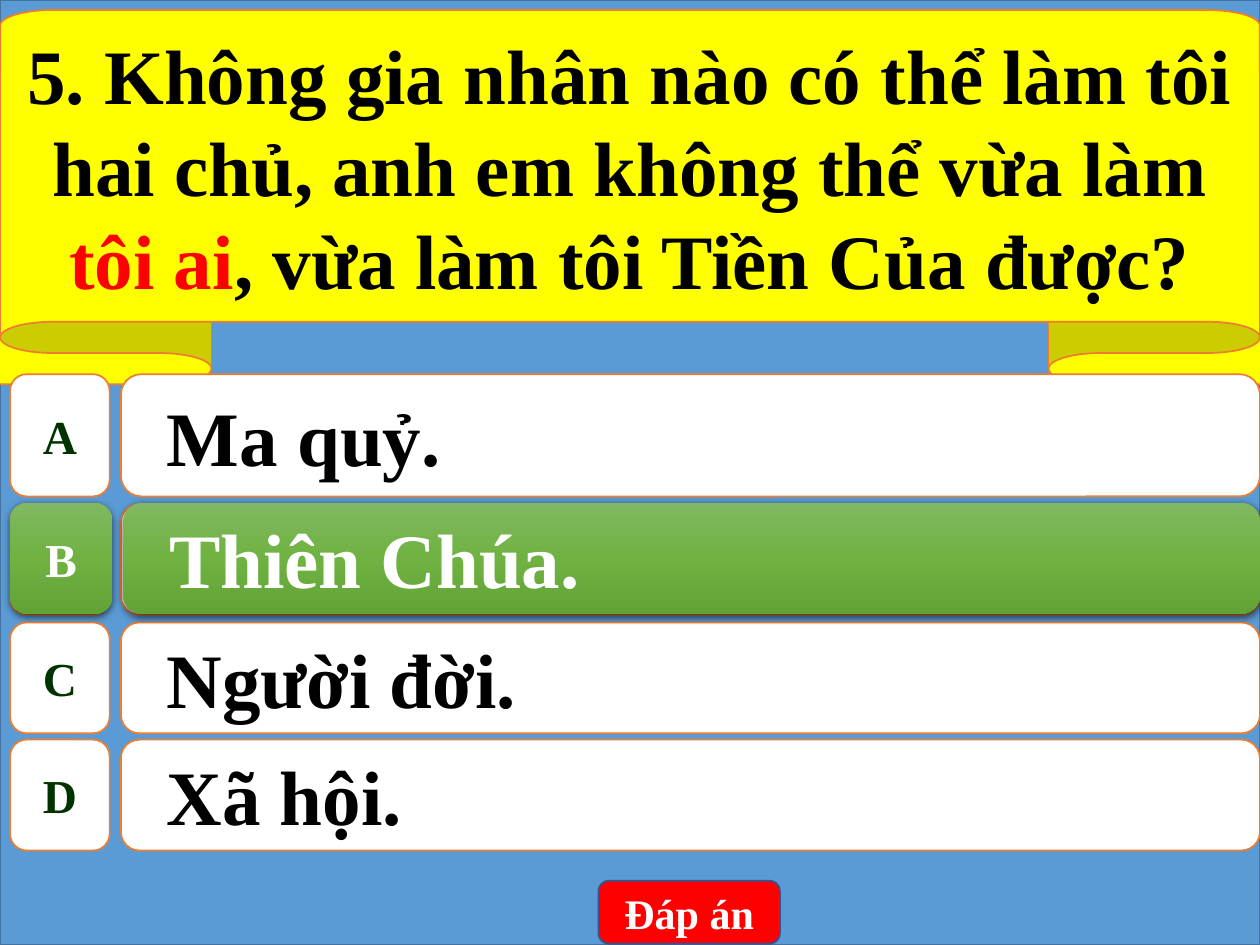
from dataclasses import dataclass

from lxml.etree import SubElement
from pptx import Presentation
from pptx.dml.color import RGBColor
from pptx.enum.shapes import MSO_SHAPE
from pptx.enum.text import MSO_ANCHOR, PP_ALIGN
from pptx.oxml.ns import qn
from pptx.util import Inches, Pt


@dataclass(frozen=True)
class Theme:
    font: str = "Times New Roman"
    backdrop: str = "5B9BD5"
    backdrop_edge: str = "43739E"
    banner: str = "FFFF00"
    accent: str = "ED7D31"
    button: str = "FF0000"
    button_edge: str = "325491"
    emphasis: str = "FF0000"
    letter: str = "003300"
    dark: str = "000000"
    light: str = "FFFFFF"
    correct: tuple = ((0, "81B861"), (50, "6FB242"), (100, "62A336"))
    large: int = 44
    medium: int = 27
    small: int = 24


THEME = Theme()

QUESTION = (
    ("5. Không gia nhân nào có thể làm tôi hai chủ, anh em không thể vừa làm ", THEME.dark),
    ("tôi ai", THEME.emphasis),
    (", vừa làm tôi Tiền Của được?", THEME.dark),
)
# letter, answer, top, height
ANSWERS = (
    ("A", "Ma quỷ.", 2.97, 0.97),
    ("B", "Thiên Chúa.", 4, 0.88),
    ("C", "Người đời.", 4.94, 0.88),
    ("D", "Xã hội.", 5.87, 0.88),
)
CORRECT = 1


def add_panel(slide, kind, box, fill=None, edge=None, adjustments=()):
    panel = slide.shapes.add_shape(kind, *(Inches(length) for length in box))
    for index, value in enumerate(adjustments):
        panel.adjustments[index] = value
    if fill:
        panel.fill.solid()
        panel.fill.fore_color.rgb = RGBColor.from_string(fill)
    if edge:
        panel.line.color.rgb = RGBColor.from_string(edge)
        panel.line.width = Pt(1)
    else:
        panel.line.fill.background()
    panel.shadow.inherit = False
    return panel


def write(panel, pieces, size, align=PP_ALIGN.CENTER):
    """Fill the panel with one paragraph of (text, colour) pieces."""
    panel.text_frame.vertical_anchor = MSO_ANCHOR.MIDDLE
    paragraph = panel.text_frame.paragraphs[0]
    paragraph.alignment = align
    for text, colour in pieces:
        run = paragraph.add_run()
        run.text = text
        run.font.name = THEME.font
        run.font.size = Pt(size)
        run.font.bold = True
        run.font.color.rgb = RGBColor.from_string(colour)
    return paragraph


def add_color(parent, colour):
    return SubElement(parent, qn("a:srgbClr"), val=colour)


def highlight(panel):
    """Give the panel the green gradient and the soft shadow of the right answer."""
    panel.fill.gradient()
    properties = panel._element.spPr
    gradient = properties.find(qn("a:gradFill"))
    stops = gradient.find(qn("a:gsLst"))
    for stop in list(stops):
        stops.remove(stop)
    for position, colour in THEME.correct:
        add_color(SubElement(stops, qn("a:gs"), pos=str(position * 1000)), colour)
    gradient.find(qn("a:lin")).set("ang", "5400000")
    shadow = SubElement(
        properties.find(qn("a:effectLst")), qn("a:outerShdw"),
        blurRad=str(Pt(4.5)), dist=str(Pt(1.5)), dir="5400000",
        algn="ctr", rotWithShape="0",
    )
    SubElement(add_color(shadow, THEME.dark), qn("a:alpha"), val="63000")


def add_answer(slide, letter, answer, letter_box, answer_box, correct=False):
    fill, edge = (None, None) if correct else (THEME.light, THEME.accent)
    letter_panel = add_panel(
        slide, MSO_SHAPE.FLOWCHART_ALTERNATE_PROCESS, letter_box, fill, edge)
    answer_panel = add_panel(
        slide, MSO_SHAPE.ROUNDED_RECTANGLE, answer_box, fill, edge, (0.167,))
    if correct:
        highlight(letter_panel)
        highlight(answer_panel)

    letter_panel.text_frame.word_wrap = False
    write(letter_panel, [(letter, THEME.light if correct else THEME.letter)], THEME.medium)
    paragraph = write(answer_panel, [(answer, THEME.light if correct else THEME.dark)],
                      THEME.large, PP_ALIGN.LEFT)
    paragraph.level = 1
    indents = paragraph._p.get_or_add_pPr()
    indents.set("marL", str(Inches(0.5)))
    indents.set("indent", str(Inches(-0.28)))


def main():
    deck = Presentation()
    deck.slide_width, deck.slide_height = Inches(10), Inches(7.5)
    slide = deck.slides.add_slide(deck.slide_layouts[6])

    add_panel(slide, MSO_SHAPE.RECTANGLE, (0, 0, 10, 7.5),
              THEME.backdrop, THEME.backdrop_edge)
    banner = add_panel(slide, MSO_SHAPE.UP_RIBBON, (-1.71, 0.08, 13.42, 2.97),
                       THEME.banner, THEME.accent, (0.167, 0.745))
    write(banner, QUESTION, THEME.large)

    for letter, answer, top, height in ANSWERS:
        add_answer(slide, letter, answer,
                   (0.08, top, 0.79, height), (0.96, top, 9.04, height))

    button = add_panel(slide, MSO_SHAPE.ROUNDED_RECTANGLE, (4.75, 6.99, 1.44, 0.5),
                       THEME.button, THEME.button_edge)
    write(button, [("Đáp án", THEME.light)], THEME.small)

    letter, answer, _, height = ANSWERS[CORRECT]
    add_answer(slide, letter, answer,
               (0.08, 3.99, 0.81, height), (0.98, 3.99, 9.02, height), correct=True)

    deck.save("out.pptx")


if __name__ == "__main__":
    main()
